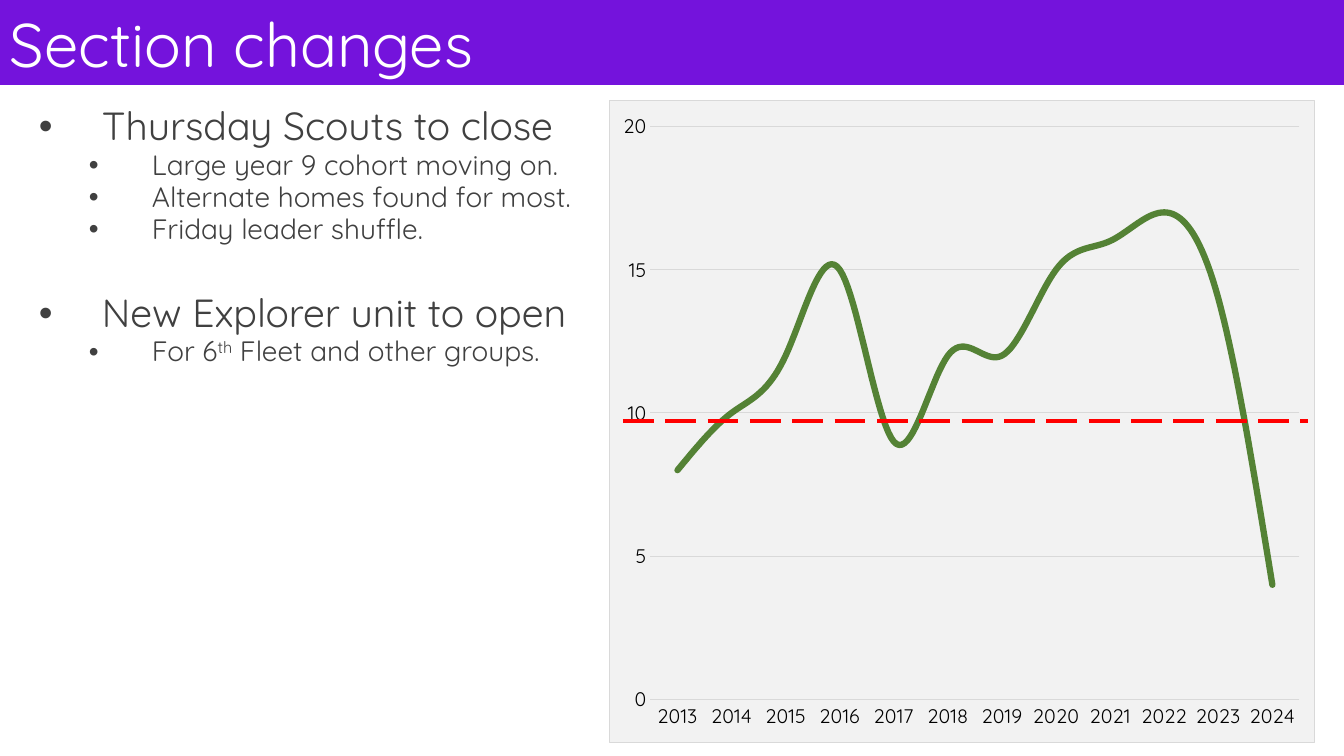
from lxml import etree
from pptx import Presentation
from pptx.chart.data import CategoryChartData
from pptx.dml.color import RGBColor
from pptx.enum.chart import XL_CHART_TYPE as ChartType, XL_TICK_MARK as TickMark
from pptx.enum.dml import MSO_LINE_DASH_STYLE as Dash
from pptx.enum.shapes import MSO_CONNECTOR as Connector, MSO_SHAPE as Shape
from pptx.enum.text import MSO_ANCHOR as Anchor, MSO_AUTO_SIZE as AutoSize
from pptx.oxml import parse_xml
from pptx.oxml.ns import nsdecls, qn
from pptx.util import Pt

EMU_PER_PX = 914400 / 100.8
FONT = "Quicksand"
COLOURS = {
    "purple": "7413DC", "white": "FFFFFF", "text": "404040", "black": "000000",
    "panel": "F2F2F2", "grid": "D9D9D9", "green": "548235", "red": "FF0000",
}
# Per bullet level: text size in points, left margin in px
LEVELS = [(28, 63), (20, 113)]
HANGING = 63
LINE_SPACING = 0.95


def px(length):
    return round(length * EMU_PER_PX)


def colour(name):
    return RGBColor.from_string(COLOURS[name])


class SlideBuilder:
    def __init__(self, presentation):
        self.slide = presentation.slides.add_slide(presentation.slide_layouts[6])
        self.shapes = self.slide.shapes

    def style_font(self, font, size, colour_name):
        for name, value in {"name": FONT, "size": Pt(size)}.items():
            setattr(font, name, value)
        font.color.rgb = colour(colour_name)

    def style_line(self, line, colour_name, width):
        line.color.rgb = colour(colour_name)
        line.width = Pt(width)

    def banner(self, text, *box):
        shape = self.shapes.add_shape(Shape.RECTANGLE, *map(px, box))
        shape.shadow.inherit = False
        shape.fill.solid()
        shape.fill.fore_color.rgb = colour("purple")
        shape.line.fill.background()
        frame = shape.text_frame
        for name, value in {"word_wrap": True, "vertical_anchor": Anchor.MIDDLE}.items():
            setattr(frame, name, value)
        paragraph = frame.paragraphs[0]
        paragraph.alignment = 1
        paragraph.text = text
        self.style_font(paragraph.runs[0].font, 44, "white")

    def bullets(self, items, *box):
        frame = self.shapes.add_textbox(*map(px, box)).text_frame
        frame.word_wrap = True
        frame.auto_size = AutoSize.SHAPE_TO_FIT_TEXT
        for index, (level, space_before, runs) in enumerate(items):
            paragraph = frame.paragraphs[0] if index == 0 else frame.add_paragraph()
            size, margin = LEVELS[level]
            format_values = {"level": level, "line_spacing": LINE_SPACING,
                             "space_before": Pt(space_before)}
            for name, value in format_values.items():
                setattr(paragraph, name, value)
            properties = paragraph._p.get_or_add_pPr()
            properties.set("marL", str(px(margin)))
            properties.set("indent", str(-px(HANGING)))
            etree.SubElement(properties, qn("a:buFont")).set("typeface", "Arial")
            etree.SubElement(properties, qn("a:buChar")).set("char", "•")
            for text, baseline in runs:
                run = paragraph.add_run()
                run.text = text
                self.style_font(run.font, size, "text")
                if baseline:
                    run._r.get_or_add_rPr().set("baseline", str(baseline * 1000))

    def line_chart(self, categories, values, box, plot):
        data = CategoryChartData()
        data.categories = categories
        data.add_series("Series 1", values)
        chart = self.shapes.add_chart(ChartType.LINE, *map(px, box), data).chart
        chart.has_legend = chart.has_title = False
        self.style_font(chart.font, 14, "black")
        chart.plots[0].vary_by_categories = False

        # Series
        series = chart.plots[0].series[0]
        series.smooth = True
        self.style_line(series.format.line, "green", 4.5)
        series.format.line._get_or_add_ln().set("cap", "rnd")

        # Axes
        for axis in (chart.category_axis, chart.value_axis):
            axis.major_tick_mark = axis.minor_tick_mark = TickMark.NONE
            self.style_font(axis.tick_labels.font, 14, "black")
        chart.category_axis.has_major_gridlines = False
        self.style_line(chart.category_axis.format.line, "grid", 0.75)
        value_axis = chart.value_axis
        scale = {"minimum_scale": 0, "maximum_scale": 20, "major_unit": 5,
                 "has_major_gridlines": True}
        for name, value in scale.items():
            setattr(value_axis, name, value)
        value_axis.format.line.fill.background()
        self.style_line(value_axis.major_gridlines.format.line, "grid", 0.75)

        # Panel fill and border
        chart_space = chart._chartSpace
        chart_space.find(qn("c:chart")).addnext(parse_xml(
            f'<c:spPr {nsdecls("c", "a")}><a:solidFill><a:srgbClr val="{COLOURS["panel"]}"/>'
            f'</a:solidFill><a:ln w="{Pt(0.75)}"><a:solidFill>'
            f'<a:srgbClr val="{COLOURS["grid"]}"/></a:solidFill></a:ln></c:spPr>'))

        # Inner plot area as fractions of the chart
        left, top, width, height = box
        fractions = {"x": (plot[0] - left) / width, "y": (plot[1] - top) / height,
                     "w": plot[2] / width, "h": plot[3] / height}
        plot_area = chart_space.find(".//" + qn("c:plotArea"))
        for layout in plot_area.findall(qn("c:layout")):
            plot_area.remove(layout)
        layout = etree.Element(qn("c:layout"))
        manual = etree.SubElement(layout, qn("c:manualLayout"))
        settings = {"layoutTarget": "inner", "xMode": "edge", "yMode": "edge", **fractions}
        for name, value in settings.items():
            etree.SubElement(manual, qn("c:" + name)).set("val", str(value))
        plot_area.insert(0, layout)

    def dashed_line(self, *ends):
        connector = self.shapes.add_connector(Connector.STRAIGHT, *map(px, ends))
        self.style_line(connector.line, "red", 2.75)
        connector.line.dash_style = Dash.LONG_DASH
        etree.SubElement(connector._element.spPr, qn("a:effectLst"))


def main():
    presentation = Presentation()
    presentation.slide_width, presentation.slide_height = px(1344), px(756)
    builder = SlideBuilder(presentation)

    # Title
    builder.banner("Section changes", 0, 0, 1344, 85)

    # Section news: level, space before in points, runs with baseline shift
    builder.bullets([
        (0, 0, [("Thursday Scouts to close", 0)]),
        (1, 0, [("Large year 9 cohort moving on.", 0)]),
        (1, 0, [("Alternate homes found for most.", 0)]),
        (1, 0, [("Friday leader shuffle.", 0)]),
        (0, 33, [("New Explorer unit to open", 0)]),
        (1, 0, [("For 6", 0), ("th", 30), (" Fleet and other groups.", 0)]),
    ], 29, 100, 636, 512)

    # Numbers by year, with the threshold line
    builder.line_chart([str(year) for year in range(2013, 2025)],
                       [8, 10, 12, 15, 9, 12, 12, 15, 16, 17, 14, 4],
                       box=(609, 100, 706, 643), plot=(650, 126, 650, 574))
    builder.dashed_line(623, 421, 1308, 421)

    presentation.save("out.pptx")


if __name__ == "__main__":
    main()
